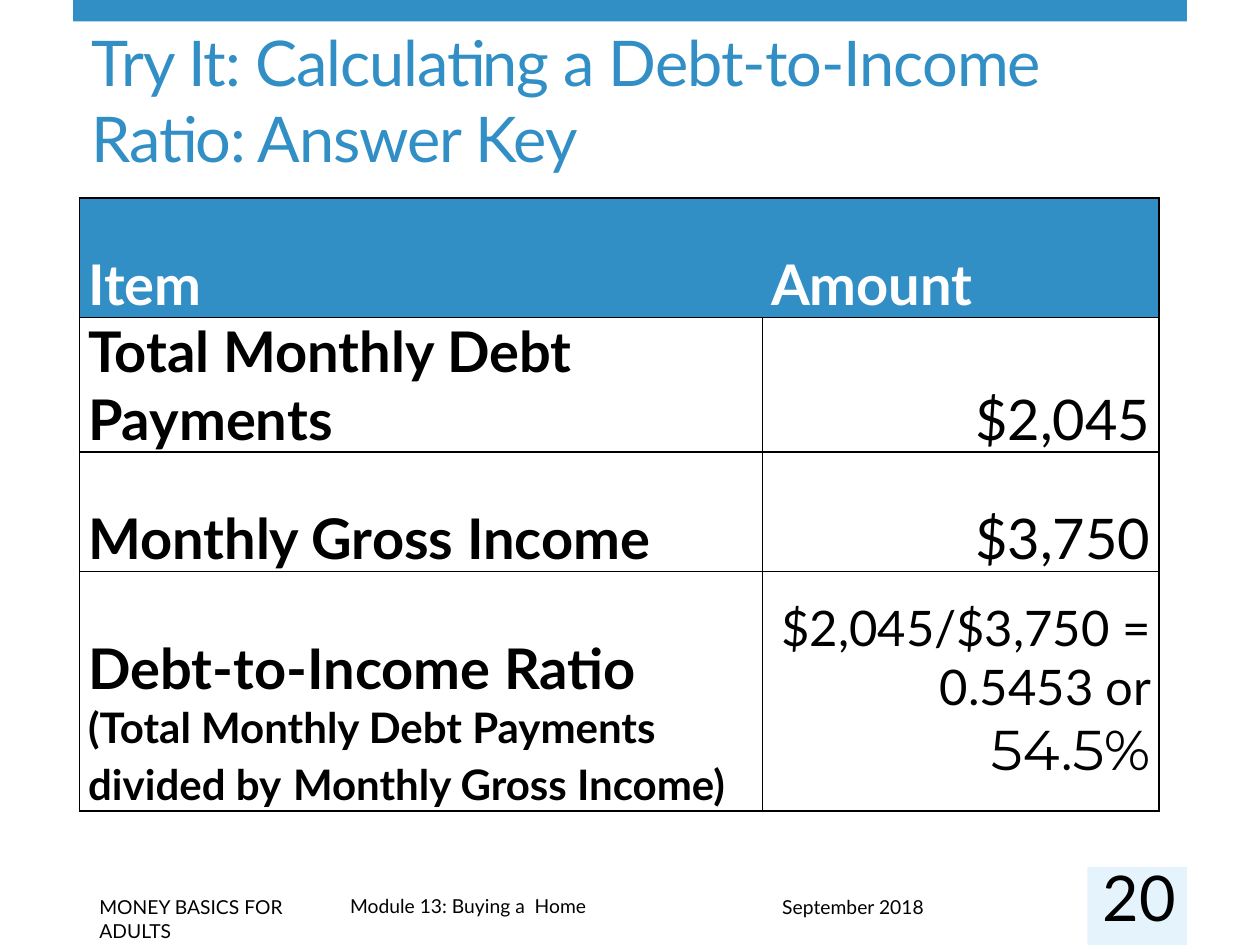
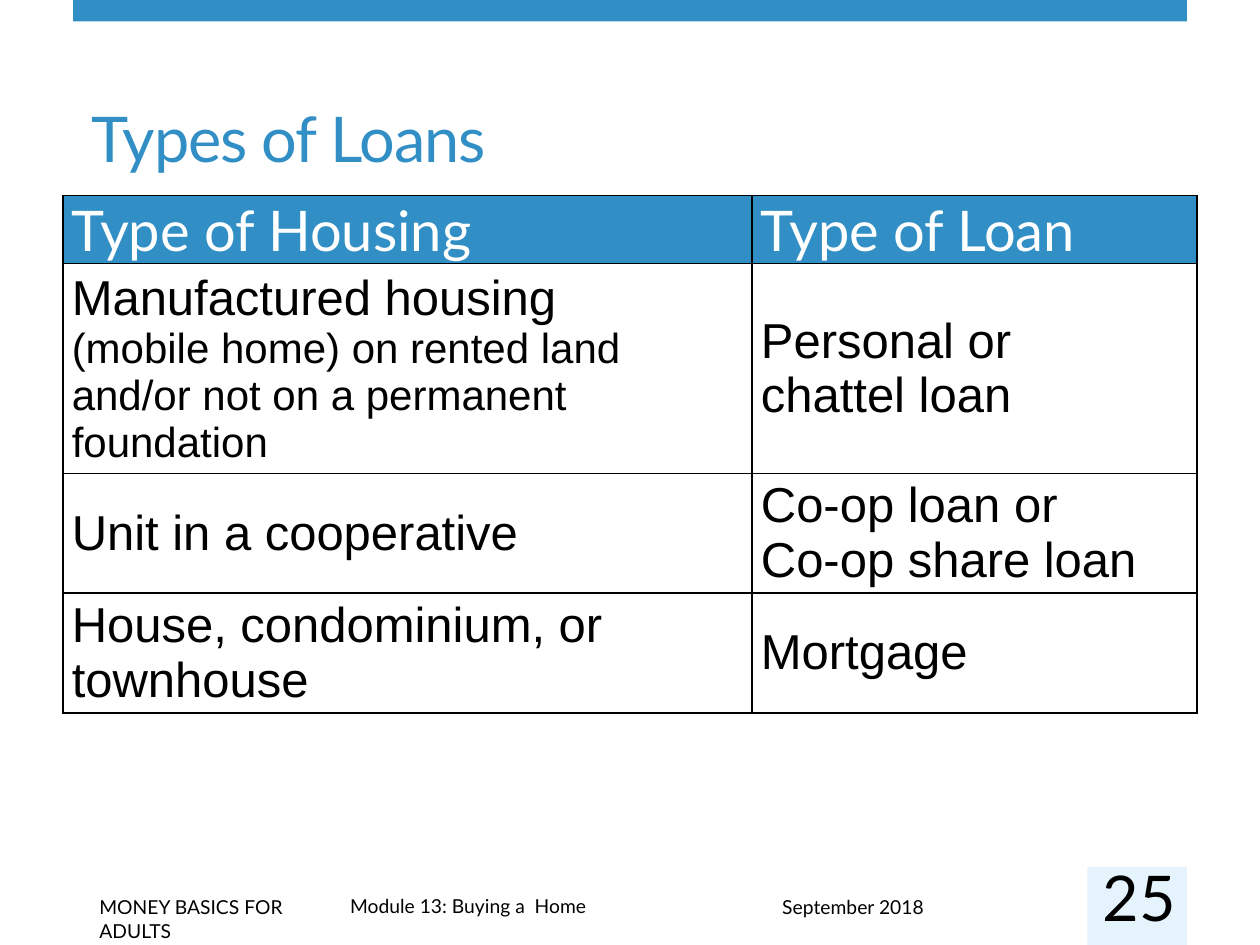
from lxml.etree import SubElement
from pptx import Presentation
from pptx.dml.color import RGBColor
from pptx.enum.shapes import MSO_SHAPE
from pptx.enum.text import MSO_ANCHOR, MSO_AUTO_SIZE, PP_ALIGN
from pptx.oxml.ns import qn
from pptx.util import Emu, Pt

PX = 9144  # 100 px to the inch
BLUE, PALE, BLACK, WHITE = "318FC5", "E4F3FC", "000000", "FFFFFF"
LATO, ARIAL, MONTSERRAT = "Lato", "Arial", "Montserrat"
TITLE_ONLY = 5
FOOTERS = [
    ("MONEY BASICS FOR ADULTS", (69, 706, 209, 29)),
    ("Module 13: Buying a  Home", (268, 705, 566, 29)),
    ("September 2018", (611, 706, 252, 29)),
]


def px(length):
    return Emu(length * PX)


def color(hex_string):
    return RGBColor.from_string(hex_string)


def format_run(run, size, font_name=LATO, hex_color=BLACK, bold=False):
    font = run.font
    font.size, font.name, font.bold = Pt(size), font_name, bold
    font.color.rgb = color(hex_color)


def add_bar(slide, box, hex_color):
    shape = slide.shapes.add_shape(MSO_SHAPE.RECTANGLE, *map(px, box))
    shape.shadow.inherit = False
    shape.fill.solid()
    shape.fill.fore_color.rgb = color(hex_color)
    shape.line.fill.background()


def add_label(slide, text, box, size):
    text_box = slide.shapes.add_textbox(*map(px, box))
    text_frame = text_box.text_frame
    text_frame.word_wrap = True
    text_frame.text = text
    format_run(text_frame.paragraphs[0].runs[0], size)
    return text_frame


def add_page_number(slide, number, box):
    text_frame = add_label(slide, str(number), box, 36)
    text_frame.margin_left = text_frame.margin_right = 0
    text_frame.margin_top = text_frame.margin_bottom = 0
    text_frame.vertical_anchor = MSO_ANCHOR.MIDDLE
    text_frame.paragraphs[0].alignment = PP_ALIGN.CENTER


def set_title(slide, text, box):
    title = slide.shapes.title
    title.left, title.top, title.width, title.height = map(px, box)
    text_frame = title.text_frame
    text_frame.text = text
    text_frame.auto_size = MSO_AUTO_SIZE.NONE
    text_frame.vertical_anchor = MSO_ANCHOR.BOTTOM
    paragraph = text_frame.paragraphs[0]
    paragraph.alignment = PP_ALIGN.LEFT
    run = paragraph.runs[0]
    format_run(run, 36, hex_color=BLUE)
    run.font._element.set("spc", "-60")


def add_framed_slide(presentation, title, title_box, number):
    """Add a slide with the shared top band, footers and page number."""
    slide = presentation.slides.add_slide(presentation.slide_layouts[TITLE_ONLY])
    add_bar(slide, (58, 0, 884, 17), BLUE)
    add_bar(slide, (863, 688, 79, 62), PALE)
    for text, box in FOOTERS:
        text_frame = add_label(slide, text, box, 11)
        text_frame.auto_size = MSO_AUTO_SIZE.SHAPE_TO_FIT_TEXT
    set_title(slide, title, title_box)
    add_page_number(slide, number, (865, 696, 78, 31))
    return slide


def set_borders(cell, hidden_side=None):
    properties = cell._tc.get_or_add_tcPr()
    for side in "LRTB":
        line = SubElement(properties, qn(f"a:ln{side}"), w=str(Pt(1)))
        if side == hidden_side:
            SubElement(line, qn("a:noFill"))
        else:
            fill = SubElement(line, qn("a:solidFill"))
            SubElement(fill, qn("a:srgbClr"), val=BLACK)


def write_cell(cell, parts, anchor, alignment=PP_ALIGN.LEFT, **style):
    """Write (text, size[, font]) parts, breaking lines at each newline."""
    cell.margin_left = cell.margin_right = px(7)
    cell.margin_top = cell.margin_bottom = 0
    cell.vertical_anchor = anchor
    paragraph = cell.text_frame.paragraphs[0]
    paragraph.alignment = alignment
    for text, size, *font_name in parts:
        for index, line in enumerate(text.split("\n")):
            if index:
                paragraph.add_line_break()
            if line:
                run = paragraph.add_run()
                run.text = line
                format_run(run, size, *font_name, **style)


def add_grid(slide, left, top, column_widths, row_heights, divided_header=True):
    """Add a bordered table with a blue header row and unfilled body cells."""
    frame = slide.shapes.add_table(
        len(row_heights), len(column_widths), px(left), px(top),
        px(sum(column_widths)), px(sum(row_heights)))
    table = frame.table
    table.horz_banding = False
    for column, width in zip(table.columns, column_widths):
        column.width = px(width)
    for row_index, (row, height) in enumerate(zip(table.rows, row_heights)):
        row.height = px(height)
        for cell, inner_side in zip(row.cells, "RL"):
            header = row_index == 0
            set_borders(cell, None if divided_header or not header else inner_side)
            if header:
                cell.fill.solid()
                cell.fill.fore_color.rgb = color(BLUE)
            else:
                cell.fill.background()
    return table


def add_ratio_slide(presentation):
    slide = add_framed_slide(
        presentation, "Try It: Calculating a Debt-to-Income Ratio: Answer Key",
        (63, 48, 874, 96), 20)
    table = add_grid(slide, 63, 157, (542, 315), (95, 95, 95, 190), divided_header=False)
    for cell, text in zip(table.rows[0].cells, ("Item", "Amount")):
        write_cell(cell, [(text, 32)], MSO_ANCHOR.BOTTOM, hex_color=WHITE, bold=True)
    ratio_label = [
        ("Debt-to-Income Ratio\n", 32),
        ("(Total Monthly Debt Payments\ndivided by", 24),
        (" ", 28),
        ("Monthly Gross Income)", 24),
    ]
    ratio_amount = [("$2,045/$3,750 = 0.5453 or ", 28), ("54.5%", 32, MONTSERRAT)]
    items = [
        ([("Total Monthly Debt Payments", 32)], [("$2,045", 32)], MSO_ANCHOR.BOTTOM),
        ([("Monthly Gross Income", 32)], [("$3,750", 32)], MSO_ANCHOR.BOTTOM),
        (ratio_label, ratio_amount, MSO_ANCHOR.MIDDLE),
    ]
    for row_index, (label, amount, amount_anchor) in enumerate(items, 1):
        write_cell(table.cell(row_index, 0), label, MSO_ANCHOR.BOTTOM, bold=True)
        write_cell(table.cell(row_index, 1), amount, amount_anchor, PP_ALIGN.RIGHT)


def add_loans_slide(presentation):
    slide = add_framed_slide(presentation, "Types of Loans", (63, 48, 820, 96), 25)
    table = add_grid(slide, 50, 155, (547, 353), (54, 143, 95, 95))
    for cell, text in zip(table.rows[0].cells, ("Type of Housing", "Type of Loan")):
        write_cell(cell, [(text, 32)], MSO_ANCHOR.MIDDLE, hex_color=WHITE)
    manufactured = [
        ("Manufactured housing\n", 28),
        ("(mobile home) on rented land and/or not on a permanent foundation", 24),
    ]
    loans = [
        (manufactured, "Personal or\nchattel loan"),
        ([("Unit in a cooperative", 28)], "Co-op loan or\nCo-op share loan"),
        ([("House, condominium, or townhouse", 28)], "Mortgage"),
    ]
    for row_index, (housing, loan) in enumerate(loans, 1):
        for column_index, parts in enumerate((housing, [(loan, 28)])):
            write_cell(table.cell(row_index, column_index), parts,
                       MSO_ANCHOR.MIDDLE, font_name=ARIAL)


def main():
    presentation = Presentation()
    presentation.slide_width, presentation.slide_height = px(1000), px(750)
    add_ratio_slide(presentation)
    add_loans_slide(presentation)
    presentation.save("out.pptx")


if __name__ == "__main__":
    main()
